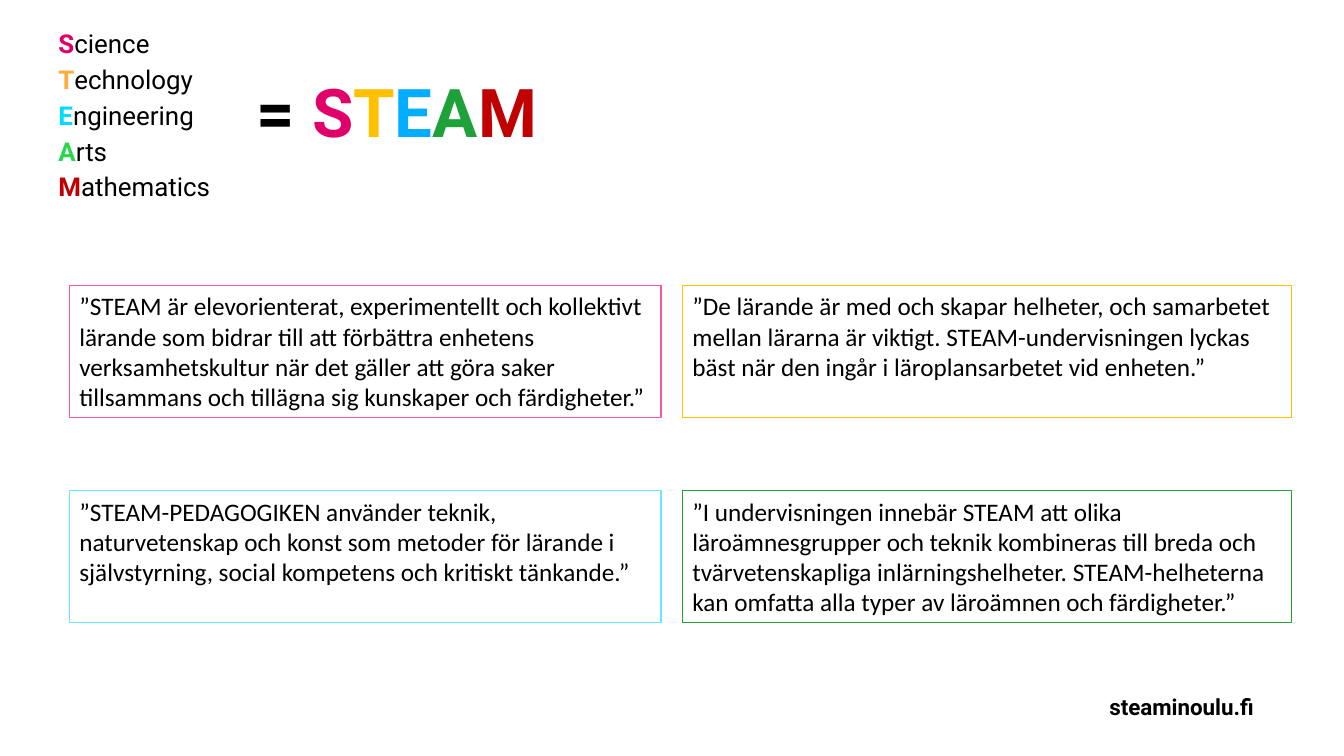
from pptx import Presentation
from pptx.dml.color import RGBColor
from pptx.enum.shapes import MSO_SHAPE
from pptx.enum.text import MSO_ANCHOR, MSO_AUTO_SIZE, PP_ALIGN
from pptx.oxml.ns import qn
from pptx.util import Cm, Pt

RECT = MSO_SHAPE.RECTANGLE
TOP, MID, LOW = MSO_ANCHOR.TOP, MSO_ANCHOR.MIDDLE, MSO_ANCHOR.BOTTOM
LEFT, RIGHT = PP_ALIGN.LEFT, PP_ALIGN.RIGHT
FIXED = MSO_AUTO_SIZE.NONE

HUES = {
    "black": "000000", "pink": "E10069", "gold": "FFC000", "blue": "00ADFF",
    "green": "1EA138", "red": "C00000", "amber": "FAAF3C", "cyan": "00DBFF",
    "lime": "28D74B", "rose": "FF54A4", "sky": "66E9FF",
}
WORDS = [("Science", "pink"), ("Technology", "amber"), ("Engineering", "cyan"),
         ("Arts", "lime"), ("Mathematics", "red")]
TITLE = [("=", "black"), (" S", "pink"), ("T", "gold"), ("E", "blue"),
         ("A", "green"), ("M", "red")]
QUOTES = [
    (0, 0, "rose", "”STEAM är elevorienterat, experimentellt och kollektivt lärande "
     "som bidrar till att förbättra enhetens verksamhetskultur när det gäller att "
     "göra saker tillsammans och tillägna sig kunskaper och färdigheter.”"),
    (0, 1, "sky", "”STEAM-PEDAGOGIKEN använder teknik, naturvetenskap och konst som "
     "metoder för lärande i självstyrning, social kompetens och kritiskt tänkande.”"),
    (1, 1, "green", "”I undervisningen innebär STEAM att olika läroämnesgrupper och "
     "teknik kombineras till breda och tvärvetenskapliga inlärningshelheter. "
     "STEAM-helheterna kan omfatta alla typer av läroämnen och färdigheter.”"),
    (1, 0, "gold", "”De lärande är med och skapar helheter, och samarbetet mellan "
     "lärarna är viktigt. STEAM-undervisningen lyckas bäst när den ingår i "
     "läroplansarbetet vid enheten.”"),
]


def paint(hue):
    return RGBColor.from_string(HUES[hue])


def style(run, size, hue="black", bold=False, face="Roboto"):
    font = run.font
    font.name, font.size, font.bold = face, Pt(size), bold
    font.color.rgb = paint(hue)


def place(shape, box):
    shape.left, shape.top, shape.width, shape.height = map(Cm, box)


def setup(frame, anchor):
    frame.word_wrap = True
    frame.auto_size = FIXED
    frame.vertical_anchor = anchor


def add_run(para, text, *look):
    run = para.add_run()
    run.text = text
    style(run, *look)


def head(slide, box):
    title = slide.shapes.title
    place(title, box)
    setup(title.text_frame, LOW)
    para = title.text_frame.paragraphs[0]
    para.alignment, para.line_spacing = LEFT, 0.9
    for text, hue in TITLE:
        add_run(para, text, 48, hue, True)


def word_list(slide, box):
    body = slide.placeholders[1]
    place(body, box)
    frame = body.text_frame
    setup(frame, TOP)
    for i, (word, hue) in enumerate(WORDS):
        para = frame.add_paragraph() if i else frame.paragraphs[0]
        para.line_spacing = 0.7
        para.space_before = Pt(10 if i else 0)
        # No bullet and no hanging indent
        props = para._p.get_or_add_pPr()
        props.set("marL", "0")
        props.set("indent", "0")
        props.append(props.makeelement(qn("a:buNone"), {}))
        add_run(para, word[0], 18.5, hue, True)
        add_run(para, word[1:], 18.5)


def quotes(slide, box):
    x, y, width, height = box
    gap, first, tall = 0.54, 14.91, 3.33
    cols = [(x, first), (x + first + gap, width - first - gap)]
    rows = [y, y + height - tall]
    for col, row, hue, text in QUOTES:
        left, wide = cols[col]
        card = slide.shapes.add_shape(RECT, 0, 0, 0, 0)
        place(card, (left, rows[row], wide, tall))
        card.shadow.inherit = False
        card.fill.background()
        card.line.color.rgb = paint(hue)
        card.line.width = Pt(0.75)
        frame = card.text_frame
        setup(frame, TOP)
        frame.text = text
        para = frame.paragraphs[0]
        para.alignment = LEFT
        style(para.runs[0], 18, face="Calibri")


def footer(slide, box):
    note = slide.shapes.add_textbox(*map(Cm, box))
    frame = note.text_frame
    setup(frame, MID)
    frame.text = "steaminoulu.fi"
    para = frame.paragraphs[0]
    para.alignment = RIGHT
    style(para.runs[0], 16, bold=True)


def main():
    deck = Presentation()
    deck.slide_width, deck.slide_height = Cm(33.87), Cm(19.05)
    slide = deck.slides.add_slide(deck.slide_layouts[1])
    head(slide, (6.22, 1.63, 11.4, 2.34))
    word_list(slide, (1.22, 0.79, 5.59, 5.74))
    footer(slide, (20.42, 17.3, 11.43, 1.02))
    quotes(slide, (1.75, 7.2, 30.79, 8.5))
    deck.save("out.pptx")


if __name__ == "__main__":
    main()
